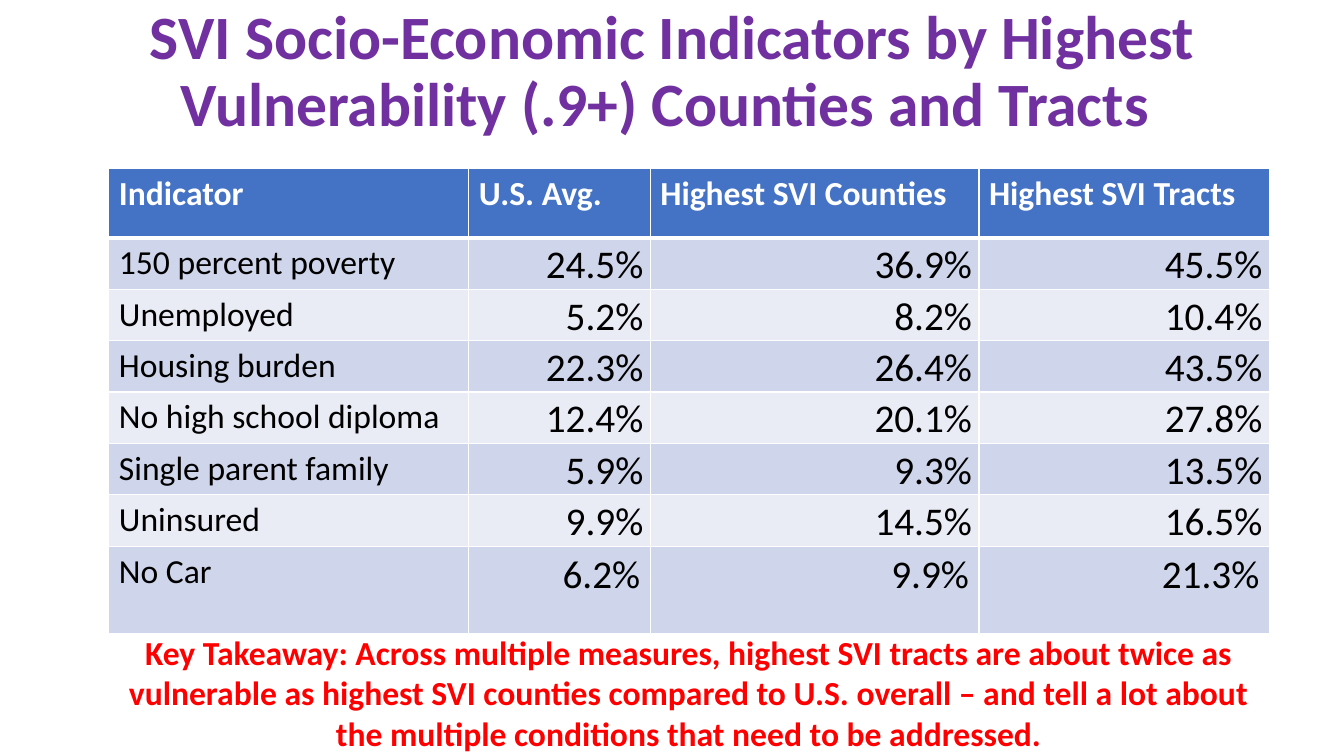
"""Build the slide on SVI socio-economic indicators."""
from lxml import etree
from pptx import Presentation, util as u
from pptx.dml.color import RGBColor
from pptx.enum import text
from pptx.oxml import ns

PURPLE = RGBColor(0x70, 0x30, 0xA0)
RED = RGBColor(0xFF, 0x00, 0x00)
BLUE = RGBColor(0x44, 0x72, 0xC4)
WHITE = RGBColor(0xFF, 0xFF, 0xFF)
BLACK = RGBColor(0x00, 0x00, 0x00)
BANDS = [RGBColor(0xE9, 0xEB, 0xF5), RGBColor(0xCF, 0xD5, 0xEA)]

LEFT, CENTER, RIGHT = text.PP_ALIGN.LEFT, text.PP_ALIGN.CENTER, text.PP_ALIGN.RIGHT
TOP, MIDDLE, BOTTOM = text.MSO_ANCHOR.TOP, text.MSO_ANCHOR.MIDDLE, text.MSO_ANCHOR.BOTTOM

TITLE = "SVI Socio-Economic Indicators by Highest Vulnerability (.9+) Counties and Tracts "
TAKEAWAY = (
    "Key Takeaway: Across multiple measures, highest SVI tracts are about twice as "
    "vulnerable as highest SVI counties compared to U.S. overall – and tell a lot about "
    "the multiple conditions that need to be addressed."
)
INDICATORS = [
    ("Indicator", "U.S. Avg.", "Highest SVI Counties", "Highest SVI Tracts"),
    ("150 percent poverty", "24.5%", "36.9%", "45.5%"),
    ("Unemployed", "5.2%", "8.2%", "10.4%"),
    ("Housing burden", "22.3%", "26.4%", "43.5%"),
    ("No high school diploma", "12.4%", "20.1%", "27.8%"),
    ("Single parent family", "5.9%", "9.3%", "13.5%"),
    ("Uninsured", "9.9%", "14.5%", "16.5%"),
    ("No Car", "6.2%", "9.9%", "21.3%"),
]
COLUMN_WIDTHS = [3.57, 1.8, 3.26, 2.88]
ROW_HEIGHTS = [0.69] + [0.51] * 6 + [0.87]
HEADER_BORDERS = {"lnL": 1, "lnR": 1, "lnT": 1, "lnB": 3}


def apply(target, formats):
    """Set each named attribute on the target."""
    for name, value in formats.items():
        setattr(target, name, value)


class SlideBuilder:
    """Hold the style and the current page."""

    font = "Calibri"

    def __init__(self, deck):
        """Add a blank page to the deck."""
        self.page = deck.slides.add_slide(deck.slide_layouts[6])

    def paragraph(self, frame, words, size, color, bold=False, align=LEFT, spacing=None):
        """Put one styled paragraph in a text frame."""
        para = frame.paragraphs[0]
        apply(para, {"alignment": align, "line_spacing": spacing})
        span = para.add_run()
        span.text = words
        apply(span.font, {"name": self.font, "size": u.Pt(size), "bold": bold})
        span.font.color.rgb = color

    def text_box(self, bounds, words, size, color, anchor=TOP, spacing=None):
        """Add a bold, centred block of wrapped text."""
        box = self.page.shapes.add_textbox(*map(u.Inches, bounds))
        apply(box.text_frame, {"word_wrap": True, "vertical_anchor": anchor})
        self.paragraph(box.text_frame, words, size, color, True, CENTER, spacing)

    def borders(self, cell, widths):
        """Draw white borders of the given widths on a cell."""
        properties = cell._tc.get_or_add_tcPr()
        for side, width in widths.items():
            line = etree.SubElement(properties, ns.qn(f"a:{side}"), w=str(u.Pt(width)))
            fill = etree.SubElement(line, ns.qn("a:solidFill"))
            etree.SubElement(fill, ns.qn("a:srgbClr"), val=str(WHITE))

    def value_cell(self, cell, words, last):
        """Fill a cell with a right-aligned percentage."""
        if not last:
            side = u.Inches(0.07)
            apply(cell, {"vertical_anchor": BOTTOM, "margin_left": side, "margin_right": side,
                         "margin_top": 0, "margin_bottom": 0})
        spacing = None if last else 1.07
        self.paragraph(cell.text_frame, words, 28, BLACK, align=RIGHT, spacing=spacing)

    def table(self, left, top, rows, widths, heights):
        """Add a banded table with a header row and a label column."""
        bounds = map(u.Inches, (left, top, sum(widths), sum(heights)))
        grid = self.page.shapes.add_table(len(rows), len(widths), *bounds).table
        for column, width in zip(grid.columns, widths):
            column.width = u.Inches(width)
        for r, (row, height) in enumerate(zip(rows, heights)):
            grid.rows[r].height = u.Inches(height)
            for c, words in enumerate(row):
                cell = grid.cell(r, c)
                if r == 0:
                    self.borders(cell, HEADER_BORDERS)
                    self.paragraph(cell.text_frame, words, 24, WHITE, True)
                elif c == 0:
                    self.paragraph(cell.text_frame, words, 24, BLACK)
                else:
                    self.value_cell(cell, words, r == len(rows) - 1)
                cell.fill.solid()
                cell.fill.fore_color.rgb = BANDS[r % 2] if r else BLUE


def main():
    """Build and save the deck."""
    deck = Presentation()
    apply(deck, {"slide_width": u.Inches(13.33), "slide_height": u.Inches(7.5)})
    builder = SlideBuilder(deck)
    builder.text_box((0.92, 0, 11.5, 1.45), TITLE, 44, PURPLE, MIDDLE, 0.9)
    builder.table(1.08, 1.67, INDICATORS, COLUMN_WIDTHS, ROW_HEIGHTS)
    builder.text_box((0.92, 6.22, 11.82, 1.31), TAKEAWAY, 24, RED)
    deck.save("out.pptx")


if __name__ == "__main__":
    main()
